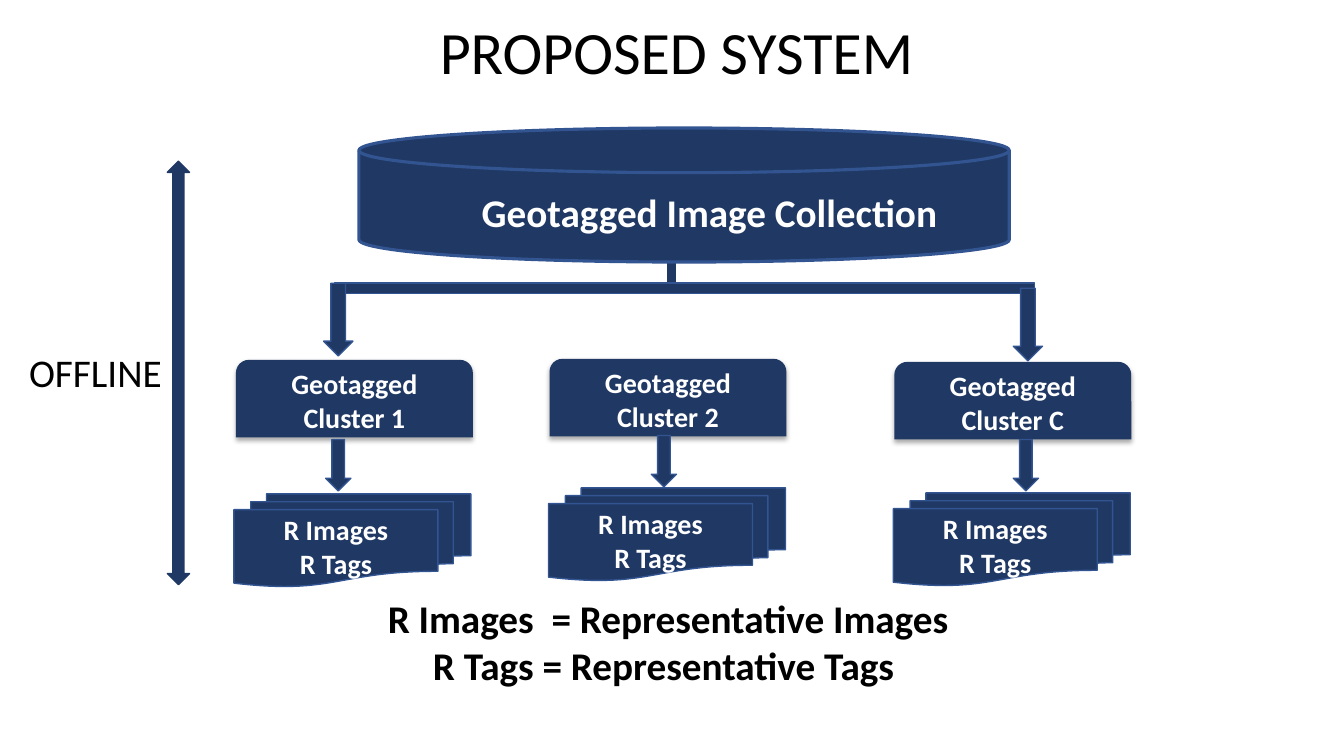
from pptx import Presentation
from pptx.dml.color import RGBColor
from pptx.enum.shapes import MSO_SHAPE
from pptx.enum.text import MSO_ANCHOR, MSO_AUTO_SIZE, PP_ALIGN
from pptx.oxml import parse_xml
from pptx.oxml.ns import nsdecls, qn
from pptx.util import Inches, Pt

RECT = MSO_SHAPE.RECTANGLE
ROUND = MSO_SHAPE.ROUND_2_SAME_RECTANGLE
DOWN = MSO_SHAPE.DOWN_ARROW
SPAN = MSO_SHAPE.UP_DOWN_ARROW
DISK = MSO_SHAPE.FLOWCHART_MAGNETIC_DISK
DOCS = MSO_SHAPE.FLOWCHART_MULTIDOCUMENT
MIDDLE, TOP = MSO_ANCHOR.MIDDLE, MSO_ANCHOR.TOP
LEFT, CENTER = PP_ALIGN.LEFT, PP_ALIGN.CENTER
FIT, FIXED = MSO_AUTO_SIZE.SHAPE_TO_FIT_TEXT, MSO_AUTO_SIZE.NONE

TITLE = "PROPOSED SYSTEM"
PHASE = "OFFLINE"
SOURCE = "Geotagged Image Collection"
OUTPUT = ["R Images", "R Tags"]
LEGEND = ["R Images  = Representative Images", "R Tags = Representative Tags "]
CLUSTERS = [
    {"name": "Geotagged Cluster 1", "at": (2.34, 3.57), "arrow": (3.23, 4.36), "docs": (2.32, 4.9)},
    {"name": "Geotagged Cluster 2", "at": (5.45, 3.56), "arrow": (6.46, 4.32), "docs": (5.44, 4.84)},
    {"name": "Geotagged Cluster C", "at": (8.87, 3.59), "arrow": (10.05, 4.36), "docs": (8.86, 4.89)},
]
BRANCHES = [(10.05, 2.86), (3.21, 2.81)]
SIZES = {"cluster": (2.35, 0.77), "arrow": (0.25, 0.51), "docs": (2.35, 0.92), "branch": (0.29, 0.72)}

THEME = {
    "font": "Calibri",
    "navy": RGBColor(0x20, 0x38, 0x64),
    "edge": RGBColor(0x32, 0x54, 0x91),
    "white": RGBColor(255, 255, 255),
    "black": RGBColor(0, 0, 0),
    "title": 42.9,
    "large": 28,
    "label": 20,
}


def style(target, **values):
    for name, value in values.items():
        setattr(target, name, value)


def write(shape, lines, size, color, bold=False, align=CENTER, anchor=MIDDLE, wrap=True, fit=FIXED):
    frame = shape.text_frame
    frame.text = "\n".join(lines)
    style(frame, word_wrap=wrap, auto_size=fit, vertical_anchor=anchor)
    for para in frame.paragraphs:
        para.alignment = align
        for run in para.runs:
            style(run.font, name=THEME["font"], size=Pt(THEME[size]), bold=bold)
            run.font.color.rgb = THEME[color]


def draw(slide, kind, box, edge="edge", width=1):
    shape = slide.shapes.add_shape(kind, *map(Inches, box))
    shape.shadow.inherit = False
    shape.fill.solid()
    shape.fill.fore_color.rgb = THEME["navy"]
    if edge:
        shape.line.color.rgb = THEME[edge]
        shape.line.width = Pt(width)
    else:
        shape.line.fill.background()
    return shape


def label(slide, box, lines, **values):
    text = slide.shapes.add_textbox(*map(Inches, box))
    write(text, lines, "large", anchor=TOP, fit=FIT, **values)


def shade(shape):
    effects = shape._element.spPr.find(qn("a:effectLst"))
    effects.append(parse_xml(
        f'<a:outerShdw {nsdecls("a")} blurRad="{Pt(3.5)}" dist="{Pt(2.2)}" '
        'dir="5400000" rotWithShape="0"><a:srgbClr val="000000">'
        '<a:alpha val="32000"/></a:srgbClr></a:outerShdw>'))


def main():
    deck = Presentation()
    style(deck, slide_width=Inches(13.33), slide_height=Inches(7.5))
    slide = deck.slides.add_slide(deck.slide_layouts[5])
    title = slide.shapes.title
    style(title, left=Inches(0.71), top=Inches(0.17), width=Inches(12), height=Inches(0.75))
    write(title, [TITLE], "title", "black")
    title.text_frame.paragraphs[0].line_spacing = 0.9

    label(slide, (0.19, 3.41, 1.6, 0.57), [PHASE], color="black", align=LEFT)
    draw(slide, SPAN, (1.66, 1.6, 0.22, 4.2), "navy")
    label(slide, (3.71, 5.85, 5.83, 1.04), LEGEND, color="black", bold=True, wrap=False)

    draw(slide, RECT, (6.62, 2.39, 0.08, 0.42), "navy")
    draw(slide, RECT, (3.32, 2.81, 6.94, 0.1))
    for spot in BRANCHES:
        draw(slide, DOWN, spot + SIZES["branch"])
    draw(slide, DISK, (3.56, 1.27, 6.45, 1.33), width=2.25)
    label(slide, (4.68, 1.82, 4.77, 0.57), [SOURCE], color="white", bold=True, align=LEFT, wrap=False)

    for item in CLUSTERS:
        card = draw(slide, ROUND, item["at"] + SIZES["cluster"], None)
        shade(card)
        write(card, [item["name"]], "label", "white", True)
        draw(slide, DOWN, item["arrow"] + SIZES["arrow"])
        stack = draw(slide, DOCS, item["docs"] + SIZES["docs"])
        write(stack, OUTPUT, "label", "white", True)

    deck.save("out.pptx")


if __name__ == "__main__":
    main()
